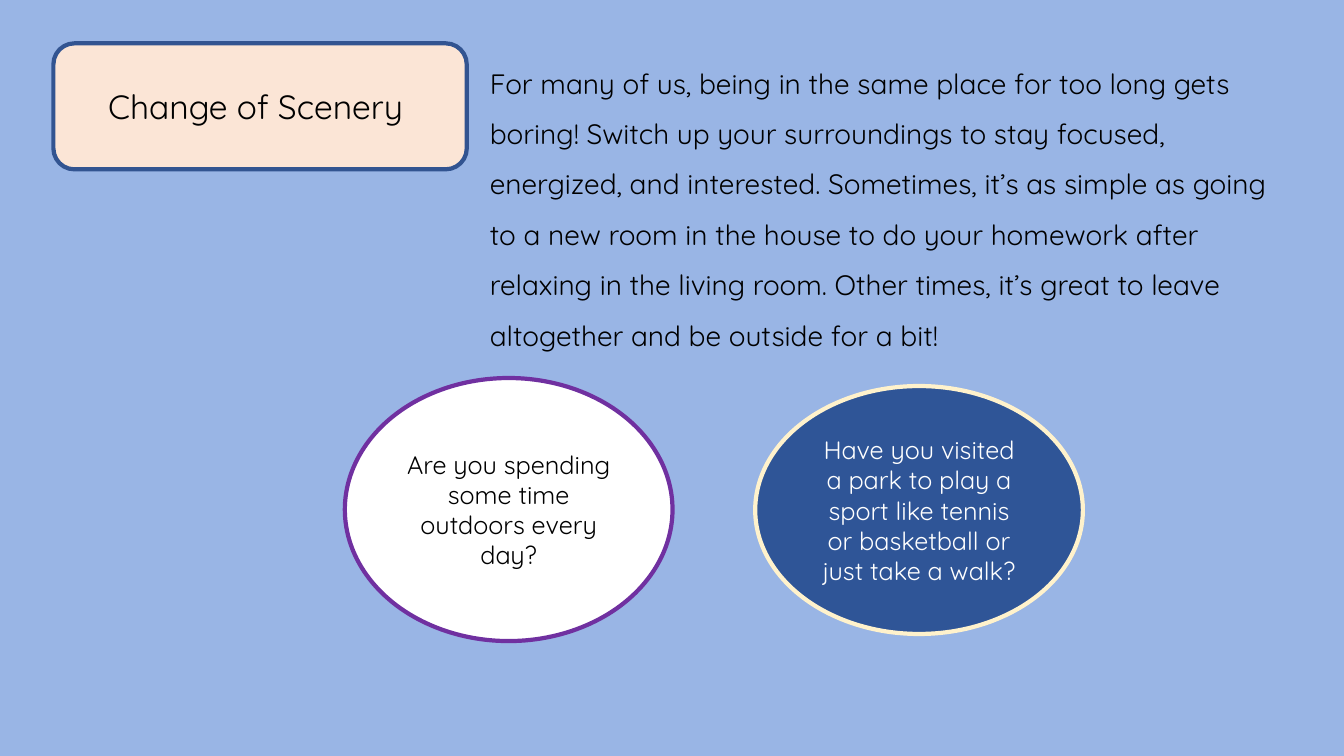
import pptx
import pptx.util
import pptx.dml.color
import pptx.enum.shapes
import pptx.enum.text

Inches = pptx.util.Inches
Pt = pptx.util.Pt
Shape = pptx.enum.shapes.MSO_SHAPE
Align = pptx.enum.text.PP_ALIGN
Anchor = pptx.enum.text.MSO_ANCHOR

FONT = "Quicksand"
ADVICE = (
    "For many of us, being in the same place for too long gets boring! "
    "Switch up your surroundings to stay focused, energized, and interested. "
    "Sometimes, it’s as simple as going to a new room in the house to do your "
    "homework after relaxing in the living room. Other times, it’s great to "
    "leave altogether and be outside for a bit!"
)


def color(value):
    return pptx.dml.color.RGBColor.from_string(value)


def write_text(shape, text, size, ink, align):
    shape.text_frame.word_wrap = True
    para = shape.text_frame.paragraphs[0]
    para.text = text
    para.alignment = align
    para.font.name = FONT
    para.font.size = Pt(size)
    para.font.color.rgb = color(ink)
    return para


def add_bubble(page, kind, box, text, size, fill, outline, ink):
    bubble = page.shapes.add_shape(kind, *map(Inches, box))
    bubble.shadow.inherit = False
    bubble.fill.solid()
    bubble.fill.fore_color.rgb = color(fill)
    bubble.line.color.rgb = color(outline)
    bubble.line.width = Pt(3)
    bubble.text_frame.vertical_anchor = Anchor.MIDDLE
    write_text(bubble, text, size, ink, Align.CENTER)


def add_advice(page, box):
    advice = page.shapes.add_textbox(*map(Inches, box))
    para = write_text(advice, ADVICE, 20, "000000", Align.LEFT)
    para.line_spacing = 1.5
    advice.text_frame.auto_size = pptx.enum.text.MSO_AUTO_SIZE.SHAPE_TO_FIT_TEXT


def build_scenery_page(deck):
    page = deck.slides.add_slide(deck.slide_layouts[6])
    page.background.fill.solid()
    page.background.fill.fore_color.rgb = color("99B5E5")
    add_bubble(page, Shape.OVAL, (7.49, 3.83, 3.25, 2.46),
               "Have you visited a park to play a sport like tennis "
               "or basketball or just take a walk?",
               18, "2F5597", "FFF2CC", "FFFFFF")
    add_bubble(page, Shape.OVAL, (3.42, 3.75, 3.25, 2.61),
               "Are you spending some time outdoors every day?",
               18, "FFFFFF", "7030A0", "000000")
    add_bubble(page, Shape.ROUNDED_RECTANGLE, (0.53, 0.43, 4.1, 1.25),
               "Change of Scenery ", 24, "FBE5D6", "325491", "000000")
    add_advice(page, (4.76, 0.44, 7.92, 3.07))


def main():
    deck = pptx.Presentation()
    deck.slide_width = Inches(13.33)
    deck.slide_height = Inches(7.5)
    build_scenery_page(deck)
    deck.save("out.pptx")


if __name__ == "__main__":
    main()
